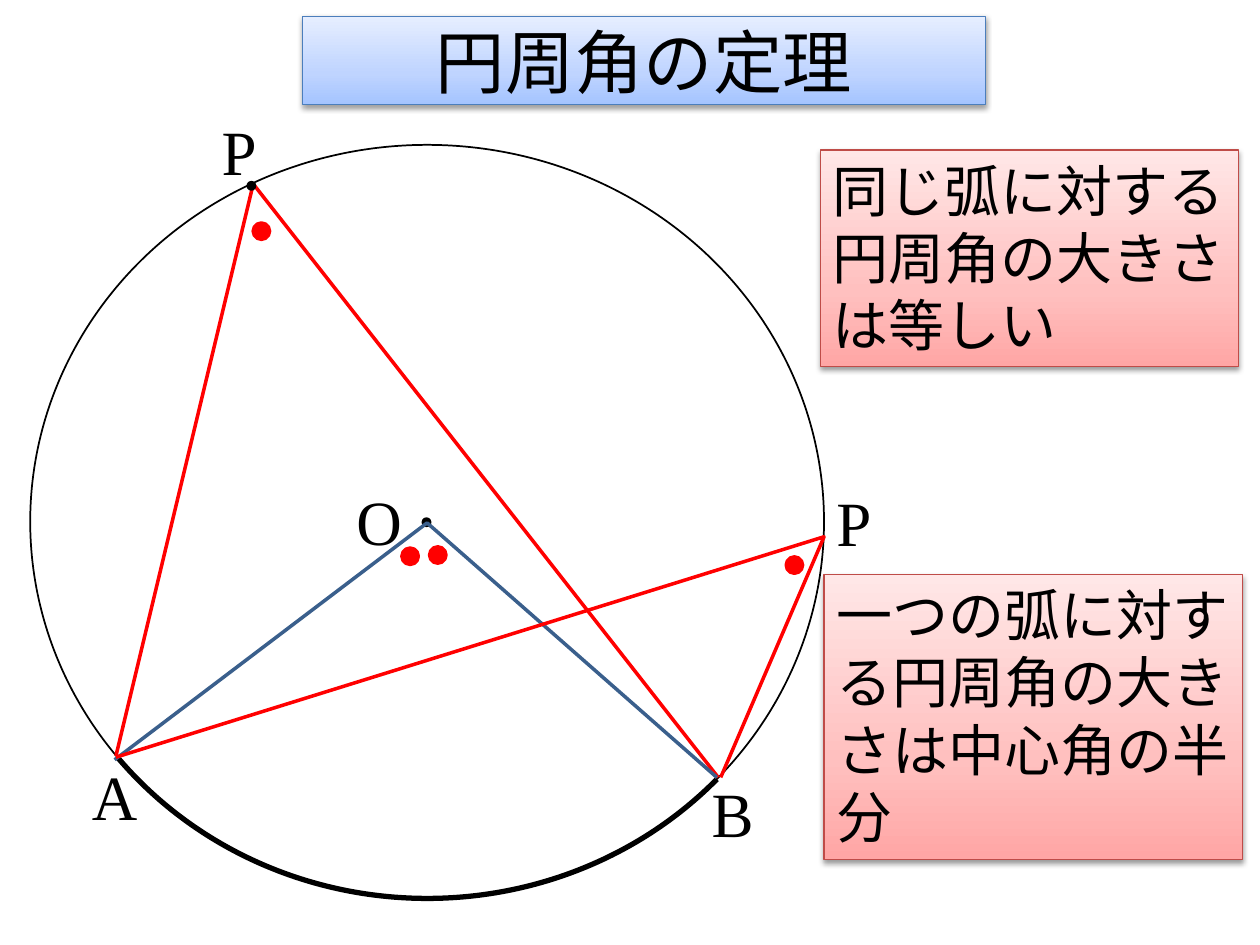
"""Build a slide on the inscribed angle theorem."""
from pptx import Presentation
from pptx.dml.color import RGBColor
from pptx.enum.shapes import MSO_SHAPE as Preset
from pptx.enum.text import MSO_ANCHOR as Anchor, PP_ALIGN as Align
from pptx.oxml import parse_xml
from pptx.oxml.ns import nsdecls
from pptx.util import Inches, Pt

COLORS = {"black": "000000", "red": "FF0000", "blue": "3A5F8C",
          "title_line": "4B7EBC", "note_line": "BF4C48"}
TITLE_STOPS = {0: "A4C4FF", 35: "BFD4FF", 100: "E6EEFF"}
NOTE_STOPS = {0: "FFA6A5", 35: "FFC0BF", 100: "FFE7E7"}
CIRCLE = (0.24, 1.15, 6.3, 5.98)


def color(name):
    """Return the named palette colour."""
    return RGBColor.from_string(COLORS[name])


def set_line(shape, name, width):
    """Give a shape a solid outline and no inherited shadow."""
    shape.shadow.inherit = False
    shape.line.color.rgb = color(name)
    shape.line.width = Pt(width)


def add_preset(slide, preset, box, line, width, fill=None):
    """Add an outlined preset shape, filled only when a colour is named."""
    shape = slide.shapes.add_shape(preset, *map(Inches, box))
    set_line(shape, line, width)
    if fill:
        shape.fill.solid()
        shape.fill.fore_color.rgb = color(fill)
    else:
        shape.fill.background()
    return shape


def add_dot(slide, left, top, size, name):
    """Add a filled round mark."""
    add_preset(slide, Preset.OVAL, (left, top, size, size), name, 2, name)


def add_angle(slide, points, name):
    """Draw the two sides of an angle through three points."""
    start, *others = [tuple(map(Inches, point)) for point in points]
    builder = slide.shapes.build_freeform(*start)
    builder.add_line_segments(others, close=False)
    shape = builder.convert_to_shape()
    shape.fill.background()
    set_line(shape, name, 2)


def add_arc(slide, start, end):
    """Draw the thick arc AB, its angles in degrees before the half turn."""
    arc = add_preset(slide, Preset.ARC, CIRCLE, "black", 3)
    arc.rotation = 180
    for index, degrees in enumerate((start, end)):
        arc.adjustments[index] = degrees * 0.6


def write(frame, text, size, font, align=Align.LEFT):
    """Put one black paragraph into a text frame."""
    paragraph = frame.paragraphs[0]
    paragraph.text = text
    paragraph.alignment = align
    paragraph.font.size = Pt(size)
    paragraph.font.name = font
    paragraph.font.color.rgb = color("black")


def add_label(slide, text, left, top, width):
    """Name a point of the figure."""
    box = slide.shapes.add_textbox(*map(Inches, (left, top, width, 0.71)))
    box.text_frame.word_wrap = False
    write(box.text_frame, text, 36, "Times New Roman")


def add_panel(slide, box, text, size, line, stops, align=Align.LEFT, anchor=Anchor.TOP):
    """Add a text panel with a vertical gradient and a soft shadow."""
    shape = add_preset(slide, Preset.RECTANGLE, box, line, 0.75)
    shape.fill.gradient()
    shape.fill.gradient_angle = 90
    properties = shape._element.spPr
    stop_list = properties.find(".//{*}gsLst")
    stop_xml = "".join(
        f'<a:gs pos="{position * 1000}"><a:srgbClr val="{value}"/></a:gs>'
        for position, value in stops.items())
    stop_list.getparent().replace(
        stop_list, parse_xml(f'<a:gsLst {nsdecls("a")}>{stop_xml}</a:gsLst>'))
    properties.find("{*}effectLst").append(parse_xml(
        f'<a:outerShdw {nsdecls("a")} blurRad="40000" dist="20000" dir="5400000" '
        'rotWithShape="0"><a:srgbClr val="000000"><a:alpha val="38000"/>'
        '</a:srgbClr></a:outerShdw>'))
    frame = shape.text_frame
    frame.word_wrap = True
    frame.vertical_anchor = anchor
    write(frame, text, size, "Calibri", align)


def main():
    """Compose the slide and save it."""
    presentation = Presentation()
    presentation.slide_width, presentation.slide_height = Inches(10), Inches(7.5)
    slide = presentation.slides.add_slide(presentation.slide_layouts[6])

    add_panel(slide, (2.4, 0.13, 5.42, 0.7), "円周角の定理", 39.6,
              "title_line", TITLE_STOPS, Align.CENTER, Anchor.MIDDLE)
    add_preset(slide, Preset.OVAL, CIRCLE, "black", 1)
    add_angle(slide, [(0.92, 6), (2.01, 1.46), (5.7, 6.17)], "red")
    add_arc(slide, 221.63, 322.7)
    add_dot(slide, 3.36, 4.12, 0.05, "black")
    for label in [("O", 2.73, 3.78, 0.54), ("B", 5.55, 6.1, 0.51),
                  ("A", 0.63, 5.96, 0.52), ("P", 1.66, 0.84, 0.49)]:
        add_label(slide, *label)
    add_angle(slide, [(0.91, 6.03), (3.39, 4.15), (5.69, 6.17)], "blue")
    add_angle(slide, [(0.92, 6.01), (6.54, 4.26), (5.72, 6.17)], "red")
    add_label(slide, "P", 6.54, 3.79, 0.49)
    add_dot(slide, 1.97, 1.45, 0.05, "black")

    for box, text in [
            ((6.51, 1.19, 3.32, 1.72), "同じ弧に対する円周角の大きさは等しい"),
            ((6.54, 4.56, 3.32, 2.26), "一つの弧に対する円周角の大きさは中心角の半分")]:
        add_panel(slide, box, text, 32, "note_line", NOTE_STOPS)
    for left, top in [(6.24, 4.42), (2.01, 1.77), (3.41, 4.34), (3.19, 4.35)]:
        add_dot(slide, left, top, 0.13, "red")

    presentation.save("out.pptx")


if __name__ == "__main__":
    main()
